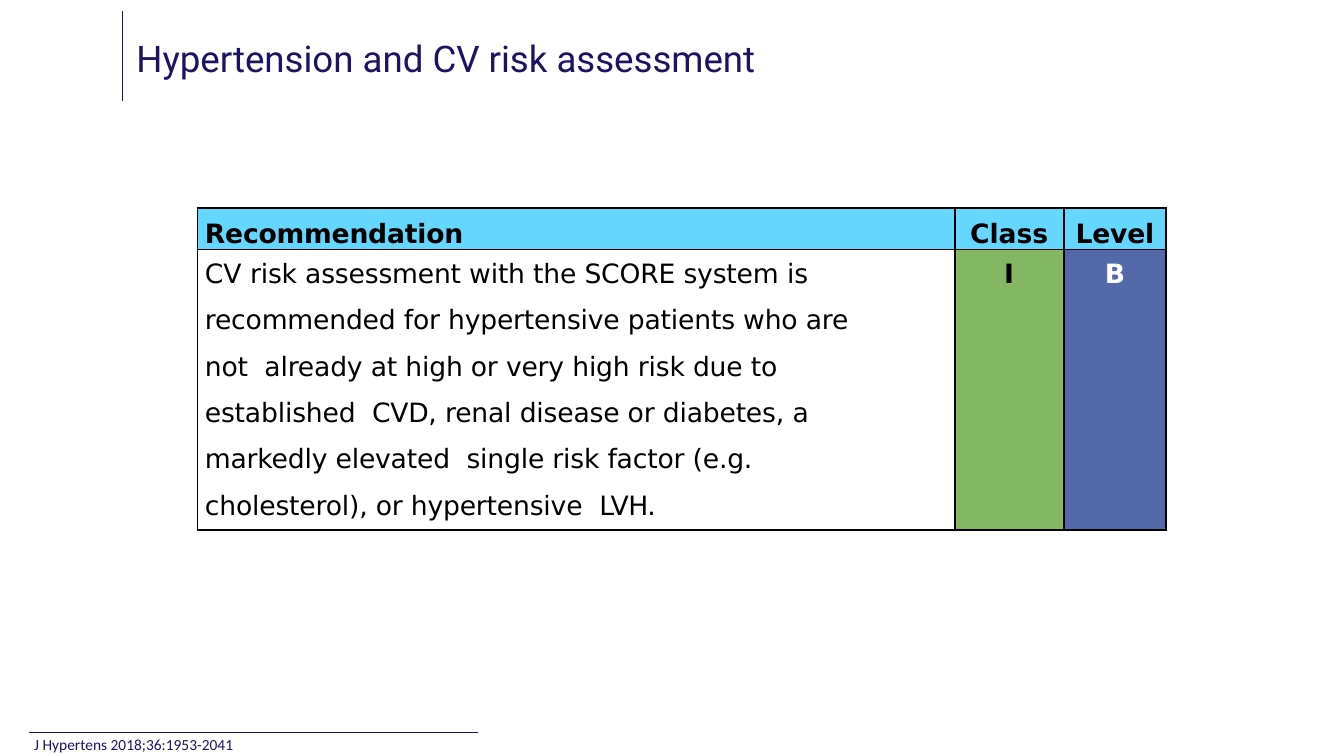
"""Build the slide on hypertension and CV risk assessment."""
import pptx
import pptx.util
import pptx.dml.color
import pptx.enum.shapes
import pptx.enum.text
import pptx.oxml
import pptx.oxml.ns

HUES = {"navy": "1B1465", "black": "000000", "white": "FFFFFF",
        "sky": "65D7FF", "green": "83B763", "blue": "5469A9"}
Pt = pptx.util.Pt
ALIGN = pptx.enum.text.PP_ALIGN
MIDDLE = pptx.enum.text.MSO_ANCHOR.MIDDLE

deck = pptx.Presentation()
deck.slide_width = pptx.util.Inches(13.33)
deck.slide_height = pptx.util.Inches(7.5)
slide = deck.slides.add_slide(deck.slide_layouts[6])


def place(*shares):
    """Turn percent shares of width and height, in turn, into lengths."""
    sides = (deck.slide_width, deck.slide_height)
    return [int(sides[i % 2] * share / 100) for i, share in enumerate(shares)]


def write(para, runs, face, size, hue, bold=False):
    """Add runs of (text, letter spacing in hundredths of a point)."""
    for text, gap in runs:
        run = para.add_run()
        run.text = text
        run.font.name = face
        run.font.size = Pt(size)
        run.font.bold = bold
        run.font.color.rgb = pptx.dml.color.RGBColor.from_string(HUES[hue])
        run.font._element.set("spc", str(gap))


for ends in ((9.08, 1.47, 9.08, 13.33), (2.18, 96.93, 35.56, 96.93)):
    rule = slide.shapes.add_connector(
        pptx.enum.shapes.MSO_CONNECTOR.STRAIGHT, *place(*ends))
    rule.line.width = Pt(0.5)
    rule.line.color.rgb = pptx.dml.color.RGBColor.from_string(HUES["navy"])
    rule._element.spPr.append(pptx.oxml.parse_xml(
        f'<a:effectLst {pptx.oxml.ns.nsdecls("a")}/>'))

title = [("Hypertension and ", 0), ("CV ", -10), ("risk assessment", 0)]
source = [("J Hypertens 2018;36:1953-2041", 0)]
for area, inset, runs, face, size, lead in (
        ((10.05, 0.67, 63.47, 14), 0.1, title, "Roboto", 26.2, 1),
        ((1.8, 97.33, 62.49, 2.67), 0.75, source, "Calibri", 11, 0.9)):
    frame = slide.shapes.add_textbox(*place(*area)).text_frame
    frame.word_wrap = True
    frame.vertical_anchor = MIDDLE
    frame.margin_left = place(inset)[0]
    frame.margin_right = frame.margin_top = frame.margin_bottom = 0
    frame.paragraphs[0].line_spacing = lead
    write(frame.paragraphs[0], runs, face, size, "navy")

advice = [
    [("CV ", 0), ("risk assessment with the SCORE system ", -10), ("is", 0)],
    [("recommended for hypertensive patients who are not  already at high "
      "or very high risk due to established  ", -10),
     ("CVD, ", -20), ("renal disease or diabetes, ", -10), ("a ", 0),
     ("markedly elevated  single risk factor (e.g. cholesterol), "
      "or hypertensive  ", -10), ("LVH.", -30)]]
grid = [
    [([[("Recommendation", -10)]], "sky", "black", True),
     ([[("Class", 0)]], "sky", "black", True),
     ([[("Level", -10)]], "sky", "black", True)],
    [(advice, "white", "black", False),
     ([[("I", 0)]], "green", "black", True),
     ([[("B", 0)]], "blue", "white", True)]]

table = slide.shapes.add_table(2, 3, *place(14.7, 27.47, 72.09, 42.14)).table
table.first_row = table.horz_banding = False
for col, share in zip(table.columns, (56.34, 8.1, 7.65)):
    col.width = place(share)[0]
for row, share in zip(table.rows, (5.47, 36.67)):
    row.height = place(0, share)[1]

for r, line in enumerate(grid):
    for c, (paras, fill, hue, bold) in enumerate(line):
        cell = table.cell(r, c)
        cell.margin_left = place(0.55 if c == 0 else 0)[0]
        cell.margin_right = place(6 if c == 0 and r == 1 else 0)[0]
        cell.margin_top = place(0, 1.23)[1]
        cell.margin_bottom = 0
        for side in "LRTB":
            cell._tc.get_or_add_tcPr().append(pptx.oxml.parse_xml(
                f'<a:ln{side} {pptx.oxml.ns.nsdecls("a")} w="{Pt(1.5)}">'
                f'<a:solidFill><a:srgbClr val="{HUES["black"]}"/></a:solidFill>'
                f'</a:ln{side}>'))
        cell.fill.solid()
        cell.fill.fore_color.rgb = pptx.dml.color.RGBColor.from_string(HUES[fill])
        for i, runs in enumerate(paras):
            frame = cell.text_frame
            para = frame.add_paragraph() if i else frame.paragraphs[0]
            para.alignment = ALIGN.CENTER if c else ALIGN.LEFT
            para.line_spacing = Pt(23.2) if r == 0 else 1.5 if i else 1.0
            write(para, runs, "DejaVu Sans", 19, hue, bold)

deck.save("out.pptx")
